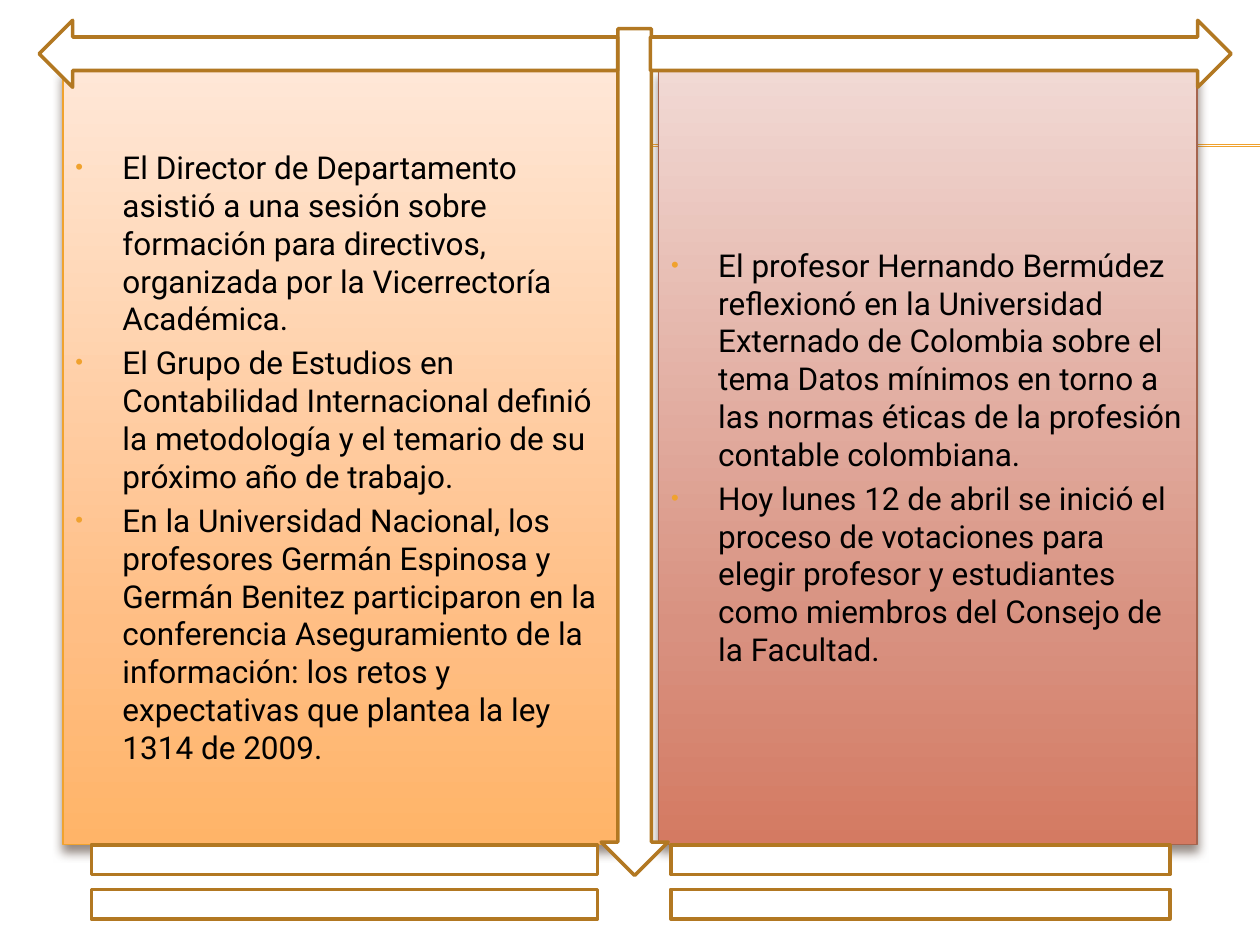
from copy import deepcopy

from lxml.etree import SubElement
from pptx import Presentation
from pptx.dml.color import RGBColor
from pptx.enum.shapes import MSO_CONNECTOR, MSO_SHAPE
from pptx.enum.text import MSO_ANCHOR, PP_ALIGN
from pptx.oxml.ns import qn
from pptx.util import Cm, Pt

WHITE = RGBColor(0xFF, 0xFF, 0xFF)
BLACK = RGBColor(0, 0, 0)
AMBER = RGBColor(0xF0, 0xA2, 0x2E)
OCHRE = RGBColor(0xB2, 0x78, 0x22)
RUST = RGBColor(0xA5, 0x64, 0x4E)
BROWN = RGBColor(0x4E, 0x3B, 0x30)
PEACH_SHADES = (RGBColor(0xFF, 0xE7, 0xD7), RGBColor(0xFF, 0xBE, 0x84), RGBColor(0xFF, 0xB4, 0x68))
CLAY_SHADES = (RGBColor(0xF1, 0xD9, 0xD4), RGBColor(0xD8, 0x91, 0x80), RGBColor(0xD4, 0x7A, 0x62))

DEPARTMENT_NEWS = (
    "El Director de Departamento asistió a una sesión sobre formación para directivos, "
    "organizada por la Vicerrectoría Académica.",
    "El Grupo de Estudios en Contabilidad Internacional definió la metodología y el temario "
    "de su próximo año de trabajo.",
    "En la Universidad Nacional, los profesores Germán Espinosa y Germán Benitez participaron "
    "en la conferencia Aseguramiento de la información: los retos y expectativas que plantea "
    "la ley 1314 de 2009.",
)
FACULTY_NEWS = (
    "El profesor Hernando Bermúdez reflexionó en la Universidad Externado de Colombia sobre "
    "el tema Datos mínimos en torno a las normas éticas de la profesión contable colombiana.",
    "Hoy lunes 12 de abril se inició el proceso de votaciones para elegir profesor y "
    "estudiantes como miembros del Consejo de la Facultad.",
)


class NewsSlide:
    font = "Roboto"
    size = Pt(18)
    gap = Pt(3.6)
    stops = (0, 0.72, 1)

    def __init__(self, deck):
        self.slide = deck.slides.add_slide(deck.slide_layouts[6])

    def rule(self, left, top, right):
        line = self.slide.shapes.add_connector(
            MSO_CONNECTOR.STRAIGHT, Cm(left), Cm(top), Cm(right), Cm(top))
        line.line.color.rgb = AMBER
        line.line.width = Pt(0.75)
        SubElement(line.element.spPr, qn("a:effectLst"))

    def shape(self, kind, left, top, width, height, outline=OCHRE, weight=2):
        box = self.slide.shapes.add_shape(kind, Cm(left), Cm(top), Cm(width), Cm(height))
        box.shadow.inherit = False
        box.fill.solid()
        box.fill.fore_color.rgb = WHITE
        box.line.color.rgb = outline
        box.line.width = Pt(weight)
        return box

    def panel(self, left, width, shades, outline, news):
        box = self.shape(MSO_SHAPE.RECTANGLE, left, 1.4, width, 15.62, outline, 0.79)
        self.shade(box, shades)
        self.drop_shadow(box)
        frame = box.text_frame
        frame.word_wrap = True
        frame.vertical_anchor = MSO_ANCHOR.MIDDLE
        frame.text = "\n".join(news)
        for para in frame.paragraphs:
            self.bullet(para)

    def shade(self, box, shades):
        box.fill.gradient()
        box.fill.gradient_angle = 270
        stop_list = box.element.spPr.find(qn("a:gradFill")).find(qn("a:gsLst"))
        stop_list.append(deepcopy(stop_list[-1]))
        for stop, position, color in zip(box.fill.gradient_stops, self.stops, shades):
            stop.position = position
            stop.color.rgb = color

    def drop_shadow(self, box):
        effects = box.element.spPr.find(qn("a:effectLst"))
        shadow = SubElement(effects, qn("a:outerShdw"), blurRad=str(Pt(6)), dist=str(Pt(4)),
                            dir="5400000", rotWithShape="0")
        color = SubElement(shadow, qn("a:srgbClr"), val=str(BROWN))
        SubElement(color, qn("a:alpha"), val="60000")

    def bullet(self, para):
        para.alignment = PP_ALIGN.LEFT
        para.space_before = self.gap
        for span in para.runs:
            span.font.name = self.font
            span.font.size = self.size
            span.font.color.rgb = BLACK
        props = para._p.get_or_add_pPr()
        props.set("marL", str(Cm(0.95)))
        props.set("indent", str(-Cm(0.95)))
        SubElement(SubElement(props, qn("a:buClr")), qn("a:srgbClr"), val=str(AMBER))
        SubElement(props, qn("a:buSzPct"), val="70000")
        SubElement(props, qn("a:buFont"), typeface="Arial")
        SubElement(props, qn("a:buChar"), char="•")


def main():
    deck = Presentation()
    deck.slide_width, deck.slide_height = Cm(25.4), Cm(19.05)
    page = NewsSlide(deck)

    # Double rule behind the panels
    for top in (2.92, 2.95):
        page.rule(1.42, top, 25.4)

    # News panels
    page.panel(1.27, 11.23, PEACH_SHADES, AMBER, DEPARTMENT_NEWS)
    page.panel(13.28, 10.85, CLAY_SHADES, RUST, FACULTY_NEWS)

    # Arrows framing the panels
    page.shape(MSO_SHAPE.DOWN_ARROW, 12.12, 0.58, 1.35, 17.07)
    page.shape(MSO_SHAPE.RIGHT_ARROW, 13.11, 0.41, 11.71, 1.35)
    page.shape(MSO_SHAPE.LEFT_ARROW, 0.79, 0.41, 11.66, 1.35)

    # Equal signs along the bottom
    for left, width in ((0, 13.89), (11.71, 13.69)):
        page.shape(MSO_SHAPE.MATH_EQUAL, left, 16.51, width, 2.54)

    deck.save("out.pptx")


if __name__ == "__main__":
    main()
